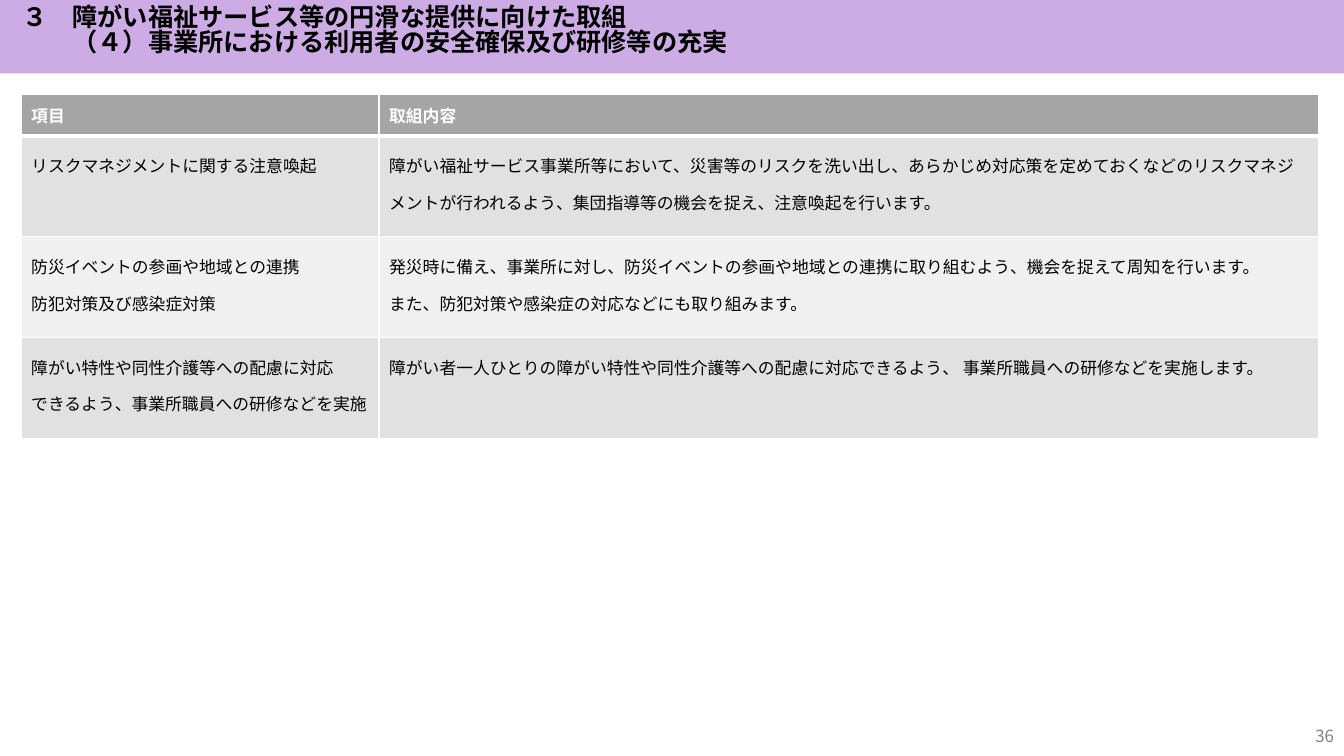
from dataclasses import dataclass

from lxml import etree
from pptx import Presentation
from pptx.dml.color import RGBColor
from pptx.enum.shapes import MSO_SHAPE
from pptx.enum.text import MSO_ANCHOR, PP_ALIGN
from pptx.oxml.ns import qn
from pptx.util import Inches, Pt

RECTANGLE = MSO_SHAPE.RECTANGLE
MIDDLE, TOP = MSO_ANCHOR.MIDDLE, MSO_ANCHOR.TOP
LEFT, RIGHT = PP_ALIGN.LEFT, PP_ALIGN.RIGHT
BLANK_LAYOUT = 6
WIDTH, HEIGHT = Inches(13.33), Inches(7.5)


@dataclass(frozen=True)
class Theme:
    font: str = "Noto Sans CJK JP"
    band: str = "CDACE6"
    header: str = "A5A5A5"
    stripes: tuple = ("E1E1E1", "F0F0F0")
    white: str = "FFFFFF"
    ink: str = "000000"
    muted: str = "808080"
    title_size: int = 18
    body_size: int = 12
    title_spacing: float = 0.82
    body_spacing: float = 1.5
    thin: int = 1
    thick: int = 3


THEME = Theme()

TITLE = [
    "３　障がい福祉サービス等の円滑な提供に向けた取組",
    "（４）事業所における利用者の安全確保及び研修等の充実",
]
HEADINGS = ("項目", "取組内容")
MEASURES = [
    (
        "リスクマネジメントに関する注意喚起",
        "障がい福祉サービス事業所等において、災害等のリスクを洗い出し、あらかじめ対応策を"
        "定めておくなどのリスクマネジメントが行われるよう、集団指導等の機会を捉え、注意喚起を行います。",
    ),
    (
        "防災イベントの参画や地域との連携\n防犯対策及び感染症対策",
        "発災時に備え、事業所に対し、防災イベントの参画や地域との連携に取り組むよう、"
        "機会を捉えて周知を行います。\nまた、防犯対策や感染症の対応などにも取り組みます。",
    ),
    (
        "障がい特性や同性介護等への配慮に対応\nできるよう、事業所職員への研修などを実施",
        "障がい者一人ひとりの障がい特性や同性介護等への配慮に対応できるよう、 "
        "事業所職員への研修などを実施します。",
    ),
]


def write(text_frame, text, size, color, bold=False, spacing=1.0, align=LEFT):
    text_frame.word_wrap = True
    text_frame.text = text
    for paragraph in text_frame.paragraphs:
        paragraph.line_spacing = spacing
        paragraph.alignment = align
        for run in paragraph.runs:
            run.font.name = THEME.font
            run.font.size = Pt(size)
            run.font.bold = bold
            run.font.color.rgb = RGBColor.from_string(color)
            east_asian = etree.SubElement(run.font._element, qn("a:ea"))
            east_asian.set("typeface", THEME.font)


def add_title_band(slide, left, top, width, height):
    band = slide.shapes.add_shape(RECTANGLE, left, top, width, height)
    band.shadow.inherit = False
    band.fill.solid()
    band.fill.fore_color.rgb = RGBColor.from_string(THEME.band)
    band.line.fill.background()

    margin = Inches(0.12)
    title = slide.shapes.add_textbox(
        left + margin, top + Inches(0.02), width - 2 * margin, height - Inches(0.02)
    )
    write(title.text_frame, "\n".join(TITLE), THEME.title_size, THEME.ink,
          bold=True, spacing=THEME.title_spacing)
    # The subtitle is indented by two full-width characters
    subtitle = title.text_frame.paragraphs[1]
    subtitle._p.get_or_add_pPr().set("marL", str(Pt(2 * THEME.title_size)))


def set_borders(cell, top_width, bottom_width):
    properties = cell._tc.get_or_add_tcPr()
    sides = {"a:lnL": THEME.thin, "a:lnR": THEME.thin,
             "a:lnT": top_width, "a:lnB": bottom_width}
    for tag, points in sides.items():
        line = etree.SubElement(properties, qn(tag), w=str(Pt(points)))
        fill = etree.SubElement(line, qn("a:solidFill"))
        etree.SubElement(fill, qn("a:srgbClr"), val=THEME.white)


def add_measures_table(slide, left, top, width, height):
    rows = [HEADINGS, *MEASURES]
    table = slide.shapes.add_table(
        len(rows), len(HEADINGS), left, top, width, height
    ).table
    table.columns[0].width = Inches(3.55)
    table.columns[1].width = width - Inches(3.55)
    header_height = Inches(0.41)

    for row_index, texts in enumerate(rows):
        is_header = row_index == 0
        table.rows[row_index].height = (
            header_height if is_header else (height - header_height) // len(MEASURES)
        )
        fill = THEME.header if is_header else THEME.stripes[(row_index - 1) % 2]
        for column_index, text in enumerate(texts):
            cell = table.cell(row_index, column_index)
            set_borders(cell,
                        top_width=THEME.thick if row_index == 1 else THEME.thin,
                        bottom_width=THEME.thick if is_header else THEME.thin)
            cell.fill.solid()
            cell.fill.fore_color.rgb = RGBColor.from_string(fill)
            cell.vertical_anchor = MIDDLE if is_header else TOP
            write(cell.text_frame, text, THEME.body_size,
                  THEME.white if is_header else THEME.ink, bold=is_header,
                  spacing=1.0 if is_header else THEME.body_spacing)


def add_page_number(slide, left, top, width, height):
    box = slide.shapes.add_textbox(left, top, width, height)
    box.text_frame.vertical_anchor = MIDDLE
    write(box.text_frame, "36", THEME.body_size, THEME.muted, align=RIGHT)


def main():
    presentation = Presentation()
    presentation.slide_width, presentation.slide_height = WIDTH, HEIGHT
    slide = presentation.slides.add_slide(presentation.slide_layouts[BLANK_LAYOUT])

    add_title_band(slide, 0, 0, WIDTH, Inches(0.73))
    add_measures_table(slide, Inches(0.21), Inches(0.94), Inches(12.87), Inches(3.41))
    number_width, number_height = Inches(3), Inches(0.4)
    add_page_number(slide, WIDTH - number_width, HEIGHT - number_height,
                    number_width, number_height)

    presentation.save("out.pptx")


if __name__ == "__main__":
    main()
